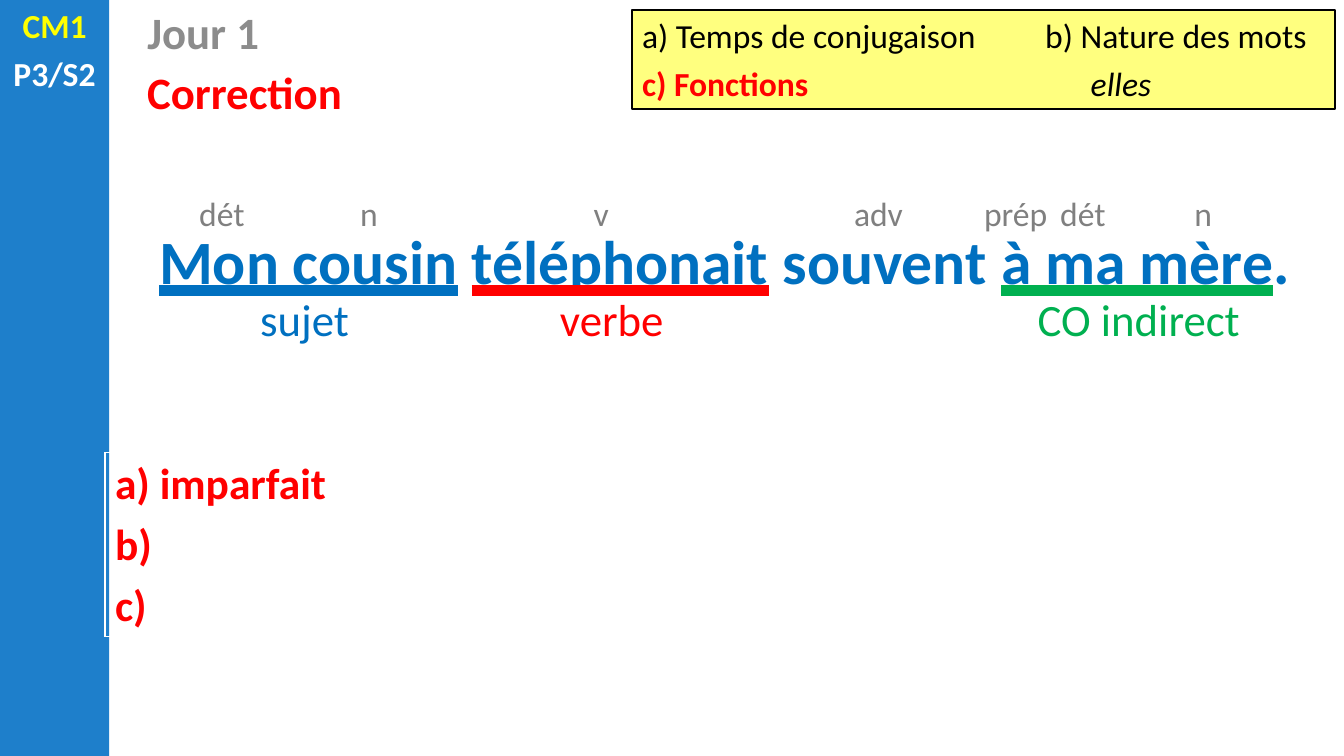
from dataclasses import dataclass

from lxml import etree
from pptx import Presentation
from pptx.dml.color import RGBColor
from pptx.enum.shapes import MSO_SHAPE
from pptx.enum.text import MSO_ANCHOR, MSO_TEXT_UNDERLINE_TYPE, PP_ALIGN
from pptx.oxml.ns import qn
from pptx.util import Pt

RECTANGLE = MSO_SHAPE.RECTANGLE
TOP = MSO_ANCHOR.TOP
LEFT, CENTER = PP_ALIGN.LEFT, PP_ALIGN.CENTER
HEAVY = MSO_TEXT_UNDERLINE_TYPE.HEAVY_LINE


@dataclass(frozen=True)
class Theme:
    font: str = "Calibri"
    sidebar: str = "1E7FCB"
    yellow: str = "FFFF00"
    white: str = "FFFFFF"
    black: str = "000000"
    day: str = "8C8C8C"
    tag: str = "808080"
    blue: str = "0070C0"
    red: str = "FF0000"
    green: str = "00B050"
    small: float = 24
    answer: float = 31
    large: float = 32
    sentence: float = 44


@dataclass
class Span:
    text: str
    color: str
    bold: bool = False
    italic: bool = False
    underline: str = ""


class LessonSlide:
    def __init__(self, deck, theme):
        self.theme = theme
        self.slide = deck.slides.add_slide(deck.slide_layouts[5])

    def format_run(self, run, span, size):
        font = run.font
        font.name, font.size = self.theme.font, Pt(size)
        font.bold, font.italic = span.bold, span.italic
        font.color.rgb = RGBColor.from_string(span.color)
        if span.underline:
            font.underline = HEAVY
            properties = run._r.get_or_add_rPr()
            underline_fill = etree.Element(qn("a:uFill"))
            solid = etree.SubElement(underline_fill, qn("a:solidFill"))
            etree.SubElement(solid, qn("a:srgbClr"), val=span.underline)
            properties.find(qn("a:latin")).addprevious(underline_fill)

    def fill_text(self, frame, lines, size, align=LEFT, before=0, after=0, tabs=()):
        frame.word_wrap = True
        frame.vertical_anchor = TOP
        for index, spans in enumerate(lines):
            paragraph = frame.paragraphs[0] if index == 0 else frame.add_paragraph()
            paragraph.alignment = align
            paragraph.space_before = Pt(before if index else 0)
            paragraph.space_after = Pt(after)
            for span in spans:
                run = paragraph.add_run()
                run.text = span.text
                self.format_run(run, span, size)
            if tabs:
                stops = etree.SubElement(paragraph._p.get_or_add_pPr(), qn("a:tabLst"))
                etree.SubElement(stops, qn("a:tab"), pos=str(Pt(tabs[index])), algn="l")

    def title(self, x, y, w, h, span, size):
        heading = self.slide.shapes.title
        heading.left, heading.top, heading.width, heading.height = map(Pt, (x, y, w, h))
        self.fill_text(heading.text_frame, [[span]], size)

    def text(self, x, y, w, h, lines, size, **layout):
        box = self.slide.shapes.add_textbox(*map(Pt, (x, y, w, h)))
        self.fill_text(box.text_frame, lines, size, **layout)

    def panel(self, x, y, w, h, fill, line=None, opacity=100):
        panel = self.slide.shapes.add_shape(RECTANGLE, *map(Pt, (x, y, w, h)))
        panel.shadow.inherit = False
        panel.fill.solid()
        panel.fill.fore_color.rgb = RGBColor.from_string(fill)
        if opacity < 100:
            color = panel._element.spPr.find(qn("a:solidFill"))[0]
            etree.SubElement(color, qn("a:alpha"), val=str(opacity * 1000))
        if line:
            panel.line.color.rgb = RGBColor.from_string(line)
            panel.line.width = Pt(1.5)
        else:
            panel.line.fill.background()
        return panel.text_frame

    def answers(self, x, y, w, h, lines, size):
        table = self.slide.shapes.add_table(1, 1, *map(Pt, (x, y, w, h))).table
        table.first_row = table.horz_banding = False
        cell = table.cell(0, 0)
        cell.fill.background()
        self.fill_text(cell.text_frame, lines, size, after=6)


def main():
    theme = Theme()
    deck = Presentation()
    deck.slide_width, deck.slide_height = Pt(960), Pt(540)
    lesson = LessonSlide(deck, theme)

    # Sidebar with class and week
    lesson.panel(0, 0, 78, 540, theme.sidebar)
    lesson.text(0, 0, 78, 71,
                [[Span("CM1", theme.yellow, bold=True)],
                 [Span("P3/S2", theme.white, bold=True)]],
                theme.small, align=CENTER, before=5.5)

    # Headings
    lesson.title(98, 0, 570, 46, Span("Jour 1", theme.day, bold=True), theme.large)
    lesson.text(98, 42.5, 348, 46, [[Span("Correction", theme.red, bold=True)]],
                theme.large)

    # Instructions
    instructions = lesson.panel(451.5, 7, 502, 71, theme.yellow, theme.black, opacity=50)
    lesson.fill_text(instructions,
                     [[Span("a) Temps de conjugaison\tb) Nature des mots", theme.black)],
                      [Span("c) Fonctions\t", theme.red, bold=True),
                       Span("elles", theme.black, italic=True)]],
                     theme.small, before=5.5, tabs=(288, 320.5))

    # Sentence, each group underlined in the colour of its function
    parts = [("Mon cousin", theme.blue), (" ", ""), ("téléphonait", theme.red),
             (" souvent ", ""), ("à ma mère", theme.green), (".", "")]
    sentence = [Span(words, theme.blue, bold=True, underline=function_color)
                for words, function_color in parts]
    lesson.text(75, 155.5, 885, 60.5, [sentence], theme.sentence, align=CENTER)

    # Word classes above the sentence
    for left, word_class in [(126, "dét"), (231, "n"), (397, "v"), (595, "adv"),
                             (693, "prép"), (741, "dét"), (827, "n")]:
        lesson.text(left, 134.5, 65, 36, [[Span(word_class, theme.tag)]],
                    theme.small, align=CENTER)

    # Functions below the sentence
    for left, width, function, color in [(173, 89, "sujet", theme.blue),
                                         (392.5, 89, "verbe", theme.red),
                                         (731.5, 164, "CO indirect", theme.green)]:
        lesson.text(left, 204.5, width, 46, [[Span(function, color)]],
                    theme.large, align=CENTER)

    # Answers
    lesson.answers(75, 323.5, 885, 131,
                   [[Span(answer, theme.red, bold=True)]
                    for answer in ("a) imparfait", "b)", "c)")],
                   theme.answer)

    deck.save("out.pptx")


if __name__ == "__main__":
    main()
